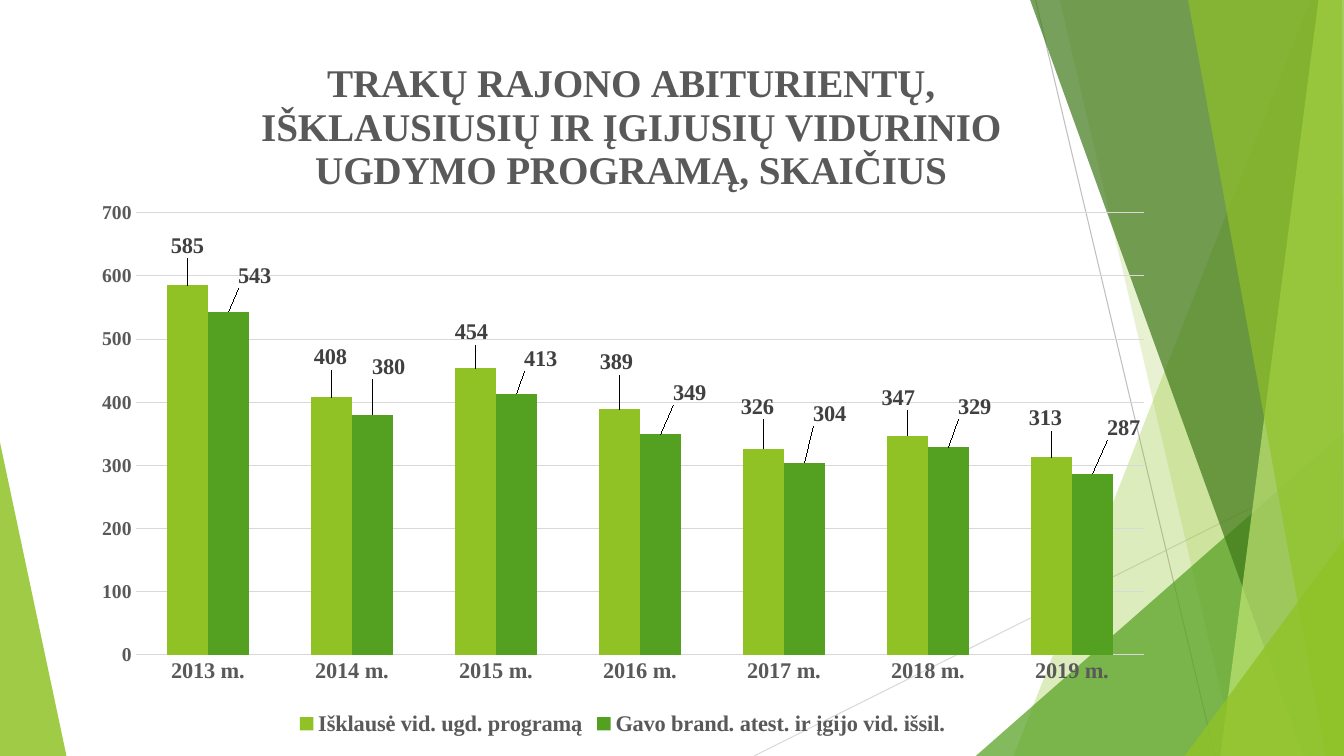
"""Builds the slide on school leavers of the Trakai district: green facets and a clustered column chart."""
import lxml.etree
import pptx
import pptx.chart.data
import pptx.dml.color
import pptx.enum.chart
import pptx.enum.shapes
import pptx.oxml
import pptx.oxml.ns
import pptx.util

THEME = {
    "lime": "90C226", "green": "54A021", "dark": "3F7819", "pale": "C0E474",
    "grid": "D9D9D9", "ray": "BFBFBF", "text": "595959", "label": "404040",
    "font": "Times New Roman", "title": 28, "body": 16, "scale": 14, "hairline": 0.75,
}
qn = pptx.oxml.ns.qn
rgb = pptx.dml.color.RGBColor.from_string

prs = pptx.Presentation()
prs.slide_width, prs.slide_height = pptx.util.Inches(13.33), pptx.util.Inches(7.5)
W, H = prs.slide_width, prs.slide_height
s = prs.slides.add_slide(prs.slide_layouts[6])


def at(x, y):
    """Turn percentages of the slide into EMU."""
    return round(W * x / 100), round(H * y / 100)


def style(font, size, color):
    """Apply the bold chart type in a theme size and colour."""
    formats = {"name": THEME["font"], "size": pptx.util.Pt(THEME[size]), "bold": True}
    for key, value in formats.items():
        setattr(font, key, value)
    font.color.rgb = rgb(THEME[color])


rays = [((56.1, 100), (100, 61.05), "grid"), ((77.05, 0), (90.4, 100), "ray")]
for start, end, color in rays:
    ray = s.shapes.add_connector(pptx.enum.shapes.MSO_CONNECTOR.STRAIGHT, *at(*start), *at(*end))
    ray.line.color.rgb = rgb(THEME[color])
    ray.line.width = pptx.util.Pt(THEME["hairline"])
    lxml.etree.SubElement(ray._element.spPr, qn("a:effectLst"))

facets = [
    ("lime", 85, [(0, 58.5), (4.95, 100), (0, 100)]),
    ("lime", 30, [(97.5, 0), (75.4, 100), (100, 100), (100, 0)]),
    ("lime", 20, [(78.85, 0), (91.95, 100), (100, 100), (100, 0)]),
    ("green", 72, [(72.6, 100), (100, 57.2), (100, 100)]),
    ("dark", 70, [(76.65, 0), (97, 100), (100, 100), (100, 0)]),
    ("pale", 70, [(98.1, 0), (90.8, 100), (100, 100), (100, 0)]),
    ("lime", 65, [(88.4, 0), (98.65, 100), (100, 100), (99.85, 0)]),
    ("lime", 80, [(88.15, 100), (100, 71.35), (100, 100)]),
]
for color, opacity, corners in facets:
    points = [at(*corner) for corner in corners]
    builder = s.shapes.build_freeform(*points[0])
    builder.add_line_segments(points[1:], close=True)
    sp = builder.convert_to_shape()
    sp.shadow.inherit = False
    sp.line.fill.background()
    sp.fill.solid()
    sp.fill.fore_color.rgb = rgb(THEME[color])
    clr = sp._element.spPr.find(".//" + qn("a:srgbClr"))
    lxml.etree.SubElement(clr, qn("a:alpha"), val=str(opacity * 1000))

years = [f"{year} m." for year in range(2013, 2020)]
series = [
    ("Išklausė vid. ugd. programą", "lime", [585, 408, 454, 389, 326, 347, 313],
     [(0, -.23), (-.01, -.23), (-.04, -.19), (-.03, -.3), (-.06, -.25), (-.09, -.21), (-.06, -.22)]),
    ("Gavo brand. atest. ir įgijo vid. išsil.", "green", [543, 380, 413, 349, 304, 329, 287],
     [(.26, -.19), (.16, -.31), (.24, -.18), (.29, -.25), (.25, -.32), (.26, -.23), (.31, -.29)]),
]
data = pptx.chart.data.CategoryChartData()
data.categories = years
for name, color, values, shifts in series:
    data.add_series(name, values)
frame = s.shapes.add_chart(pptx.enum.chart.XL_CHART_TYPE.COLUMN_CLUSTERED,
                           *at(6, 4), *at(80.65, 94), data)
chart = frame.chart
style(chart.font, "body", "text")

chart.has_title = True
tf = chart.chart_title.text_frame
r = tf.paragraphs[0].add_run()
r.text = "TRAKŲ RAJONO ABITURIENTŲ, IŠKLAUSIUSIŲ IR ĮGIJUSIŲ VIDURINIO UGDYMO PROGRAMĄ, SKAIČIUS"
style(r.font, "title", "text")
chart.chart_title.include_in_layout = False

chart.has_legend = True
chart.legend.position = pptx.enum.chart.XL_LEGEND_POSITION.BOTTOM
chart.legend.include_in_layout = False
style(chart.legend.font, "body", "text")

for axis, size in ((chart.category_axis, "body"), (chart.value_axis, "scale")):
    axis.major_tick_mark = axis.minor_tick_mark = pptx.enum.chart.XL_TICK_MARK.NONE
    axis.format.line.fill.background()
    style(axis.tick_labels.font, size, "text")
scale = chart.value_axis
scale.minimum_scale, scale.maximum_scale, scale.major_unit = 0, 700, 100
scale.has_major_gridlines = True
scale.major_gridlines.format.line.color.rgb = rgb(THEME["grid"])
scale.major_gridlines.format.line.width = pptx.util.Pt(THEME["hairline"])

plot = chart.plots[0]
plot.gap_width, plot.overlap, plot.vary_by_categories = 150, 0, False
layouts = []
for bars, (name, color, values, shifts) in zip(plot.series, series):
    bars.format.fill.solid()
    bars.format.fill.fore_color.rgb = rgb(THEME[color])
    for i in range(len(years)):
        label = bars.points[i].data_label
        style(label.font, "body", "label")
        label.position = pptx.enum.chart.XL_LABEL_POSITION.OUTSIDE_END
    for idx, (dx, dy) in zip(bars._element.findall(".//" + qn("c:dLbl") + "/" + qn("c:idx")), shifts):
        shift = {"x": pptx.util.Inches(dx) / frame.width, "y": pptx.util.Inches(dy) / frame.height}
        layouts.append((idx, shift))

area = chart._chartSpace.chart.plotArea
for old in area.findall(qn("c:layout")):
    area.remove(old)
anchor = lxml.etree.Element(qn("c:layoutTarget"), val="inner")
area.insert(0, anchor)
layouts.append((anchor, {"xMode": "edge", "yMode": "edge", "x": .051, "y": .257, "w": .93, "h": .622}))
title = chart.chart_title._element
for old in title.findall(qn("c:layout")):
    title.remove(old)
layouts.append((title.find(qn("c:tx")), {"xMode": "edge", "yMode": "edge", "x": .16, "y": .03}))
for before, places in layouts:
    layout = lxml.etree.Element(qn("c:layout"))
    before.addnext(layout)
    manual = lxml.etree.SubElement(layout, qn("c:manualLayout"))
    if before is anchor:
        manual.append(anchor)
    for key, value in places.items():
        lxml.etree.SubElement(manual, qn("c:" + key), val=str(value))

prs.save("out.pptx")
